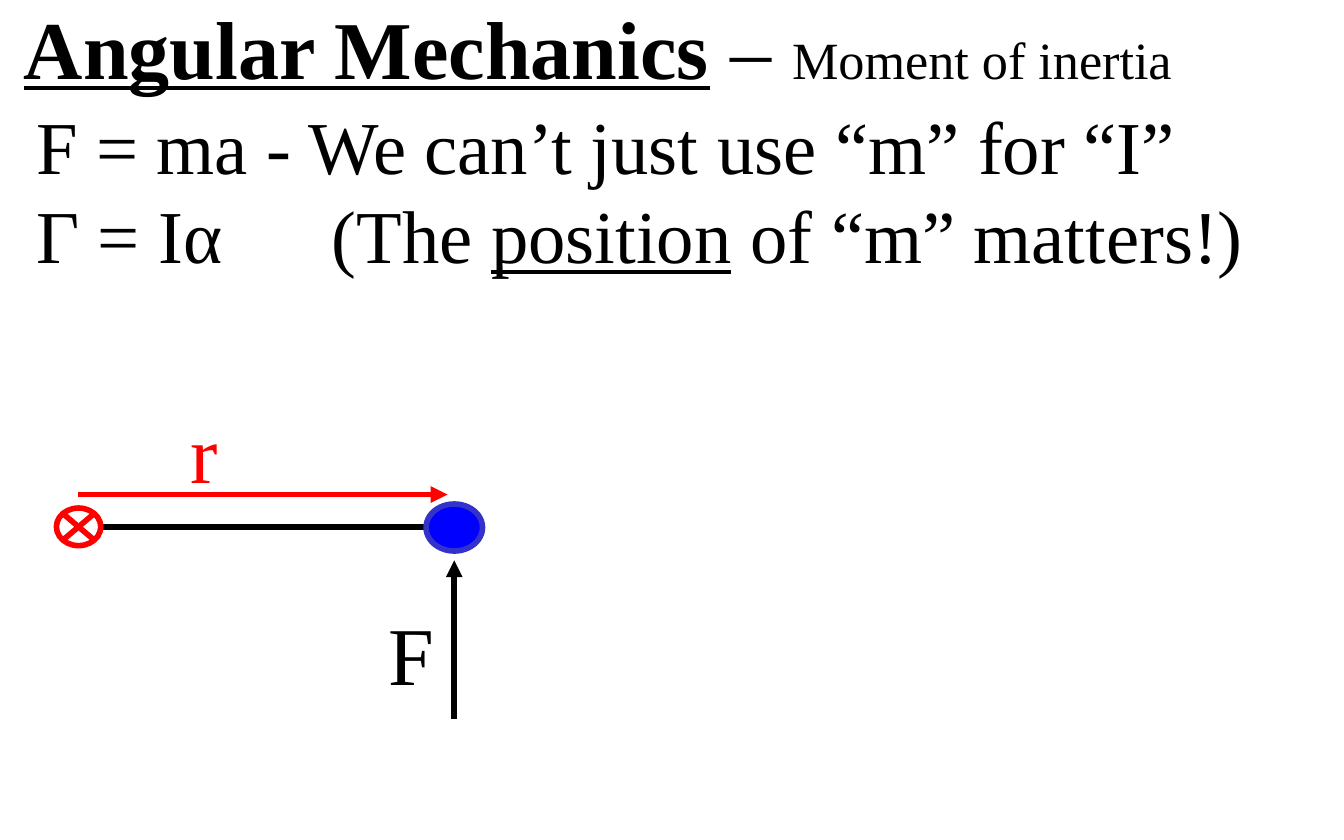
from pptx import Presentation
from pptx.dml.color import RGBColor
from pptx.enum import shapes, text
from pptx.oxml.ns import qn
from pptx.util import Inches, Pt
from lxml import etree

BLACK, RED, BLUE, NAVY, WHITE = "000000", "FF0000", "0000FF", "3333CC", "FFFFFF"
FONT = "Times New Roman"
STROKE = Pt(3)


def rgb(hex_color):
    return RGBColor.from_string(hex_color)


def add_text(slide, box, lines, size, color=BLACK, wrap=False):
    """Each line is a list of (words, font settings) pairs."""
    frame = slide.shapes.add_textbox(*map(Inches, box)).text_frame
    frame.word_wrap = wrap
    frame.auto_size = text.MSO_AUTO_SIZE.SHAPE_TO_FIT_TEXT
    for index, line in enumerate(lines):
        paragraph = frame.paragraphs[0] if index == 0 else frame.add_paragraph()
        for words, settings in line:
            run = paragraph.add_run()
            run.text = words
            run.font.name = FONT
            run.font.size = Pt(size)
            run.font.color.rgb = rgb(color)
            for setting, value in settings.items():
                setattr(run.font, setting, value)
    return frame


def add_tab_stop(paragraph, position):
    tabs = etree.SubElement(paragraph._p.get_or_add_pPr(), qn("a:tabLst"))
    etree.SubElement(tabs, qn("a:tab"), pos=str(Inches(position)), algn="l")


def add_line(slide, start, end, color=BLACK, arrow=False):
    line = slide.shapes.add_connector(
        shapes.MSO_CONNECTOR.STRAIGHT, *map(Inches, start + end))
    line.line.color.rgb = rgb(color)
    line.line.width = STROKE
    if arrow:
        etree.SubElement(line.line._get_or_add_ln(), qn("a:tailEnd"), type="triangle")
    etree.SubElement(line._element.spPr, qn("a:effectLst"))


def add_node(slide, kind, box, fill, outline):
    node = slide.shapes.add_shape(kind, *map(Inches, box))
    node.shadow.inherit = False
    node.fill.solid()
    node.fill.fore_color.rgb = rgb(fill)
    node.line.color.rgb = rgb(outline)
    node.line.width = STROKE


def add_heading(slide):
    add_text(slide, (0.08, -0.07, 8.82, 0.84), [[
        ("Angular Mechanics", {"bold": True, "underline": True}),
        (" – ", {}),
        ("Moment of inertia", {"size": Pt(28)}),
    ]], 44)


def add_equations(slide):
    equations = add_text(slide, (0.17, 0.69, 9.52, 1.45), [
        [("F = ma - We can’t just use “m” for “I”", {})],
        [("Γ = Iα\t(The ", {}), ("position", {"underline": True}),
         (" of “m” matters!)", {})],
    ], 40, wrap=True)
    add_tab_stop(equations.paragraphs[1], 2.2)


def add_rod(slide):
    """Rod from the pivot to the mass, with its radius and the applied force."""
    add_line(slide, (0.5, 3.92), (3.17, 3.92))
    add_node(slide, shapes.MSO_SHAPE.OVAL, (3.17, 3.75, 0.42, 0.35), BLUE, NAVY)
    add_node(slide, shapes.MSO_SHAPE.FLOWCHART_SUMMING_JUNCTION,
             (0.42, 3.78, 0.33, 0.28), WHITE, RED)
    add_line(slide, (0.58, 3.68), (3.33, 3.68), RED, arrow=True)
    add_text(slide, (1.32, 2.94, 0.41, 0.84), [[("r", {})]], 44, RED)
    add_line(slide, (3.38, 5.35), (3.38, 4.17), arrow=True)
    add_text(slide, (2.79, 4.44, 0.55, 0.84), [[("F", {})]], 44)


def main():
    deck = Presentation()
    deck.slide_width, deck.slide_height = Inches(10), Inches(6.25)
    slide = deck.slides.add_slide(deck.slide_layouts[6])
    add_heading(slide)
    add_equations(slide)
    add_rod(slide)
    deck.save("out.pptx")


if __name__ == "__main__":
    main()
